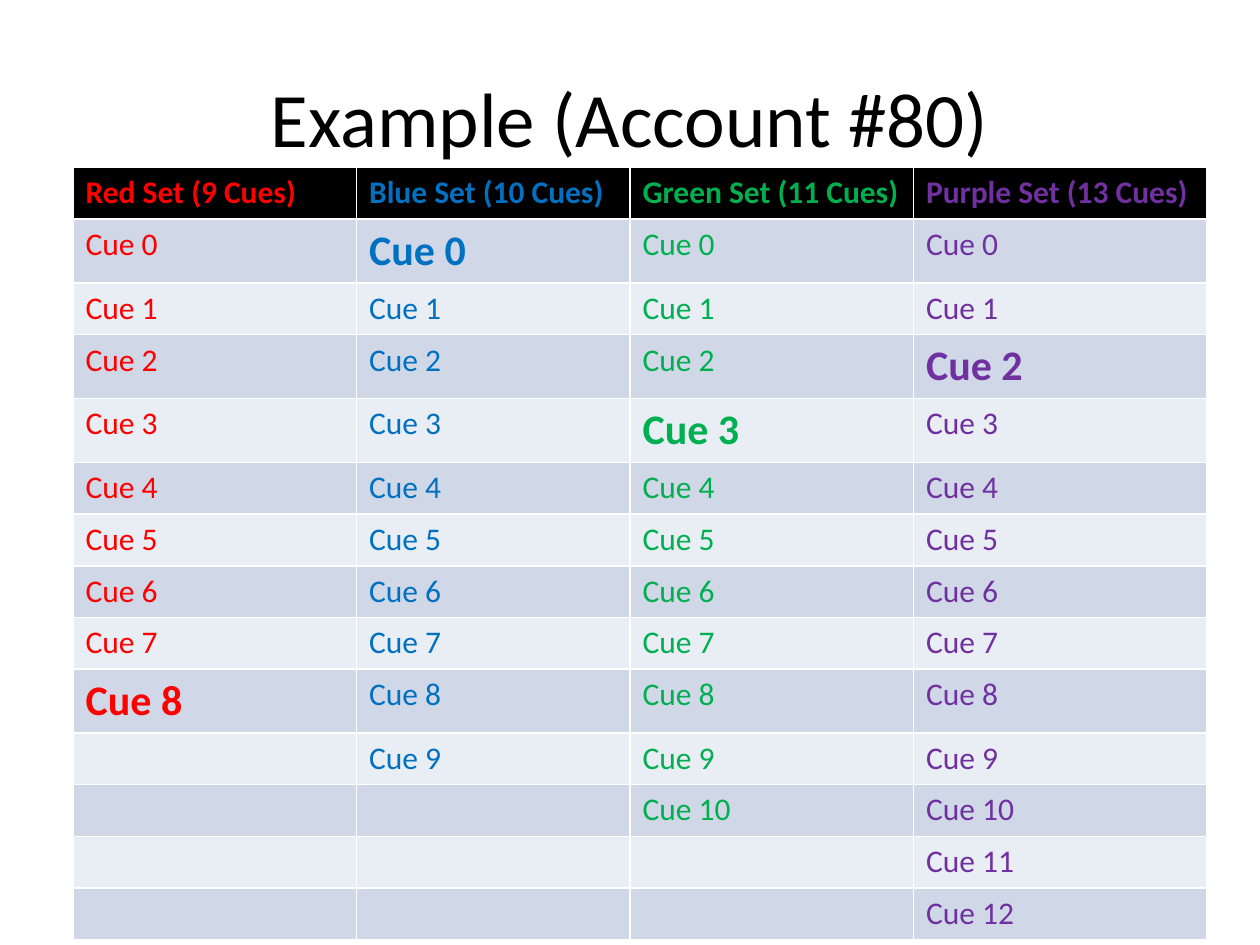
from pptx import Presentation
from pptx import util as u
from pptx.dml.color import RGBColor
from pptx.enum import text

TITLE = "Example (Account #{})"
ACCOUNT = 80
CUE_SETS = [
    ("Red", 9, "FF0000", 2.25),
    ("Blue", 10, "0070C0", 2.17),
    ("Green", 11, "00B050", 2.25),
    ("Purple", 13, "7030A0", 2.33),
]
HEADER_FILL = "000000"
BAND_FILLS = ["D0D8E8", "E9EDF4"]
ROW_HEIGHT = 0.41
TABLE_LEFT, TABLE_TOP = 0.58, 1.33


def rgb(code):
    return RGBColor.from_string(code)


def write(frame, words, size=18, color="000000", bold=False, align=text.PP_ALIGN.LEFT):
    para = frame.paragraphs[0]
    para.alignment = align
    span = para.add_run()
    span.text = words
    span.font.name = "Calibri"
    span.font.size = u.Pt(size)
    span.font.bold = bold
    span.font.color.rgb = rgb(color)


def add_title(page):
    box = page.shapes.title
    box.left, box.top, box.width, box.height = map(u.Inches, (0.5, 0.3, 9, 1.25))
    box.text_frame.vertical_anchor = text.MSO_ANCHOR.MIDDLE
    write(box.text_frame, TITLE.format(ACCOUNT), size=44, align=text.PP_ALIGN.CENTER)


def add_cue_table(page):
    row_count = 1 + max(count for _, count, _, _ in CUE_SETS)
    total_width = sum(width for _, _, _, width in CUE_SETS)
    table = page.shapes.add_table(
        row_count, len(CUE_SETS), u.Inches(TABLE_LEFT), u.Inches(TABLE_TOP),
        u.Inches(total_width), u.Inches(row_count * ROW_HEIGHT)).table

    for row in range(row_count):
        table.rows[row].height = u.Inches(ROW_HEIGHT)
        for column in range(len(CUE_SETS)):
            fill = table.cell(row, column).fill
            fill.solid()
            fill.fore_color.rgb = rgb(BAND_FILLS[(row - 1) % 2] if row else HEADER_FILL)

    for column, (name, count, color, width) in enumerate(CUE_SETS):
        table.columns[column].width = u.Inches(width)
        write(table.cell(0, column).text_frame, f"{name} Set ({count} Cues)",
              color=color, bold=True)
        for cue in range(count):
            chosen = cue == ACCOUNT % count
            write(table.cell(cue + 1, column).text_frame, f"Cue {cue}",
                  size=24 if chosen else 18, color=color, bold=chosen)


def main():
    deck = Presentation()
    deck.slide_width, deck.slide_height = u.Inches(10), u.Inches(7.5)
    page = deck.slides.add_slide(deck.slide_layouts.get_by_name("Title Only"))
    add_title(page)
    add_cue_table(page)
    deck.save("out.pptx")


if __name__ == "__main__":
    main()
